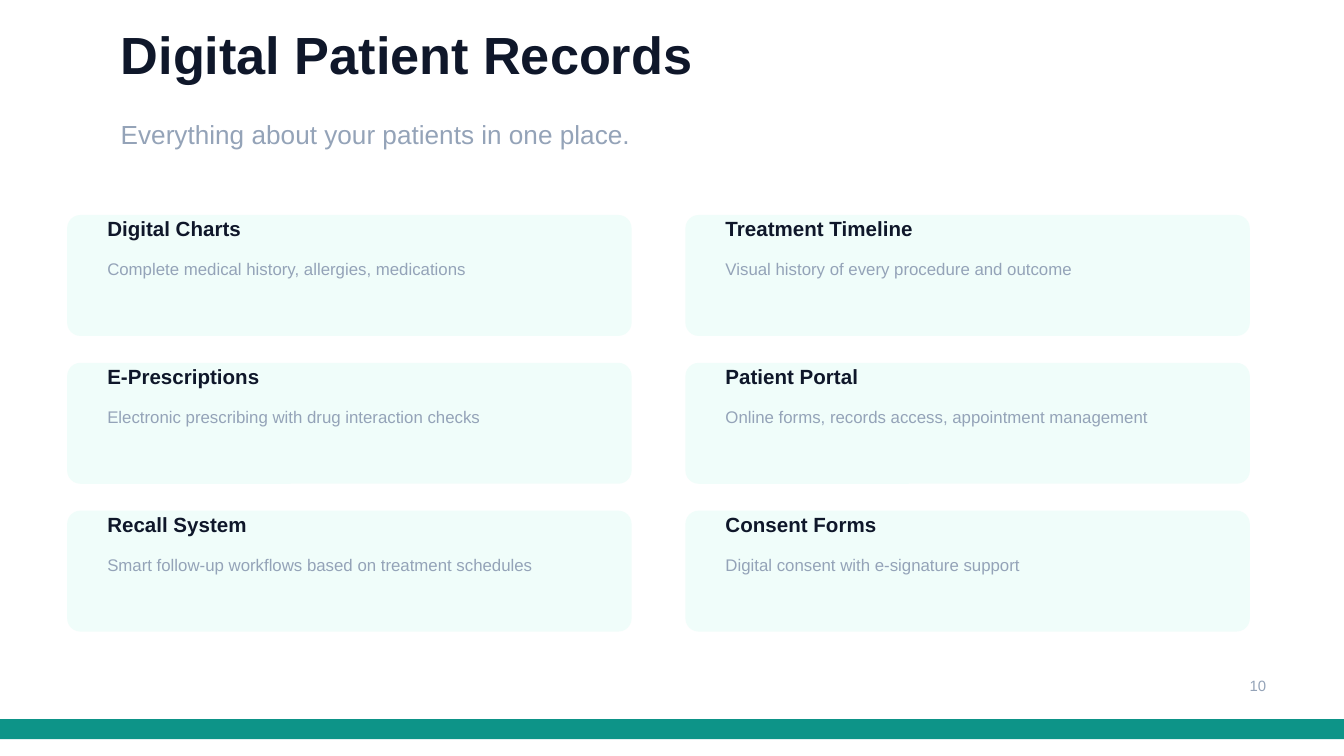
"""Build the Digital Patient Records slide with its grid of six feature cards."""
from pptx import Presentation
from pptx.dml.color import RGBColor
from pptx.enum.shapes import MSO_SHAPE as Shape
from pptx.enum.text import MSO_ANCHOR as Anchor, MSO_AUTO_SIZE as AutoSize, PP_ALIGN as Align
from pptx.util import Pt

PX = 4572
INK = RGBColor(0x0F, 0x17, 0x2A)
MUTED = RGBColor(0x94, 0xA3, 0xB8)
MINT = RGBColor(0xF0, 0xFD, 0xFA)
TEAL = RGBColor(0x0D, 0x94, 0x88)

HEADING = {"size": Pt(28), "bold": True}
SUBHEADING = {"size": Pt(14), "bold": False}
CARD_HEADING = {"size": Pt(11), "bold": True}
CARD_DETAIL = {"size": Pt(9), "bold": False}
FOLIO = {"size": Pt(8), "bold": False}

FEATURES = [
    ("Digital Charts", "Complete medical history, allergies, medications"),
    ("Treatment Timeline", "Visual history of every procedure and outcome"),
    ("E-Prescriptions", "Electronic prescribing with drug interaction checks"),
    ("Patient Portal", "Online forms, records access, appointment management"),
    ("Recall System", "Smart follow-up workflows based on treatment schedules"),
    ("Consent Forms", "Digital consent with e-signature support"),
]


def write_line(text, left, middle, width, style, color, holder=None):
    holder = holder or slide.shapes.add_textbox(0, 0, 0, 0)
    place = {"left": left, "top": middle, "width": width, "height": 0}
    for side, length in place.items():
        setattr(holder, side, length * PX)
    frame = holder.text_frame
    settings = {"text": text, "word_wrap": True, "auto_size": AutoSize.NONE,
                "vertical_anchor": Anchor.MIDDLE}
    for setting, value in settings.items():
        setattr(frame, setting, value)
    line = frame.paragraphs[0]
    line.alignment = Align.LEFT
    font = line.runs[0].font
    for setting, value in {"name": "Arial", **style}.items():
        setattr(font, setting, value)
    font.color.rgb = color


def add_panel(kind, left, top, width, height, color):
    panel = slide.shapes.add_shape(kind, left * PX, top * PX, width * PX, height * PX)
    panel.shadow.inherit = False
    panel.fill.solid()
    panel.fill.fore_color.rgb = color
    panel.line.fill.background()
    return panel


deck = Presentation()
deck.slide_width, deck.slide_height = 2000 * PX, 1125 * PX
slide = deck.slides.add_slide(deck.slide_layouts[5])

write_line("Digital Patient Records", 160, 80, 1600, HEADING, INK, slide.shapes.title)
write_line("Everything about your patients in one place.", 160, 200, 1600, SUBHEADING, MUTED)

for index, (feature, detail) in enumerate(FEATURES):
    row, column = divmod(index, 2)
    left, top = 100 + 920 * column, 320 + 220 * row
    card = add_panel(Shape.ROUNDED_RECTANGLE, left, top, 840, 180, MINT)
    card.adjustments[0] = 0.11
    write_line(feature, left + 40, top + 20, 760, CARD_HEADING, INK)
    write_line(detail, left + 40, top + 80, 760, CARD_DETAIL, MUTED)

add_panel(Shape.RECTANGLE, 0, 1070, 2000, 30, TEAL)
write_line("10", 1840, 1020, 100, FOLIO, MUTED)

deck.save("out.pptx")
